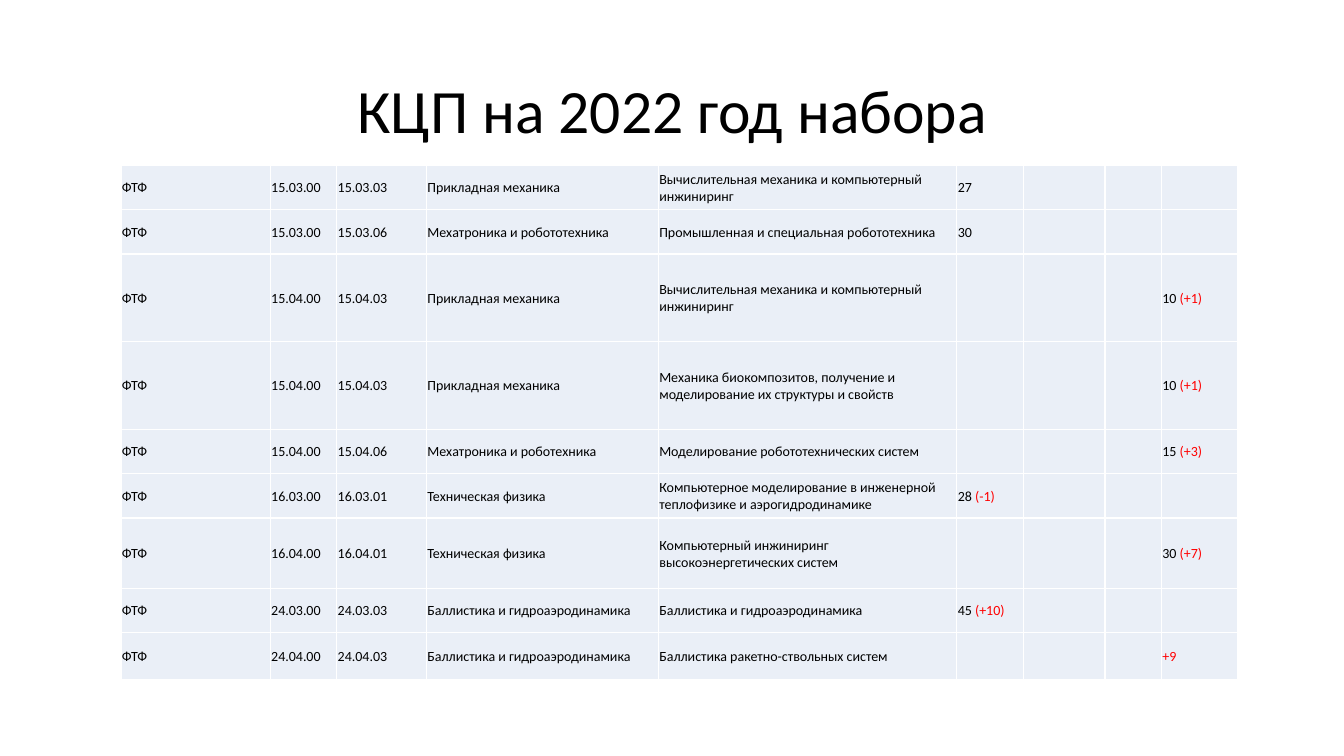
from pptx import Presentation
from pptx.dml.color import RGBColor
from pptx.enum.text import MSO_ANCHOR, PP_ALIGN
from pptx.util import Pt

PX = 9144  # EMU, 100 px to the inch
MIDDLE = MSO_ANCHOR.MIDDLE
CENTER = PP_ALIGN.CENTER
FONT = "Calibri"
TITLE_ONLY = 5

BLACK = RGBColor(0x00, 0x00, 0x00)
RED = RGBColor(0xFF, 0x00, 0x00)
PALE_BLUE = RGBColor(0xEA, 0xEF, 0xF7)

FACULTY = "ФТФ"
COLUMN_WIDTHS = [148, 66, 89, 230, 296, 66, 81, 56, 76]
BACHELOR_COLUMN = 5
MASTER_COLUMN = 8

# Row height, code, field, programme, places, change of places
PROGRAMMES = [
    (44, "15.03.03", "Прикладная механика",
     "Вычислительная механика и компьютерный инжиниринг", "27", ""),
    (44, "15.03.06", "Мехатроника и робототехника",
     "Промышленная и специальная робототехника", "30", ""),
    (87, "15.04.03", "Прикладная механика",
     "Вычислительная механика и компьютерный инжиниринг", "10 ", "(+1)"),
    (87, "15.04.03", "Прикладная механика",
     "Механика биокомпозитов, получение и моделирование их структуры и свойств",
     "10 ", "(+1)"),
    (44, "15.04.06", "Мехатроника и роботехника",
     "Моделирование робототехнических систем", "15 ", "(+3)"),
    (44, "16.03.01", "Техническая физика",
     "Компьютерное моделирование в инженерной теплофизике и аэрогидродинамике",
     "28 ", "(-1)"),
    (70, "16.04.01", "Техническая физика",
     "Компьютерный инжиниринг высокоэнергетических систем", "30 ", "(+7)"),
    (44, "24.03.03", "Баллистика и гидроаэродинамика",
     "Баллистика и гидроаэродинамика", "45 ", "(+10)"),
    (46, "24.04.03", "Баллистика и гидроаэродинамика",
     "Баллистика ракетно-ствольных систем", "", "+9"),
]


def set_font(paragraph, size):
    paragraph.font.name = FONT
    paragraph.font.size = Pt(size)
    paragraph.font.color.rgb = BLACK


def set_title(slide, text, left, top, width, height):
    title = slide.shapes.title
    title.left, title.top = left * PX, top * PX
    title.width, title.height = width * PX, height * PX
    title.text_frame.text = text
    title.text_frame.vertical_anchor = MIDDLE
    paragraph = title.text_frame.paragraphs[0]
    paragraph.alignment = CENTER
    paragraph.line_spacing = 0.9
    set_font(paragraph, 44)


def format_cell(cell):
    cell.fill.solid()
    cell.fill.fore_color.rgb = PALE_BLUE
    cell.vertical_anchor = MIDDLE
    cell.margin_left = cell.margin_right = cell.margin_top = PX
    cell.margin_bottom = 0
    set_font(cell.text_frame.paragraphs[0], 10)


def write_cell(cell, text, change=""):
    """Write text in black, followed by a change of places in red."""
    paragraph = cell.text_frame.paragraphs[0]
    if text:
        paragraph.add_run().text = text
    if change:
        run = paragraph.add_run()
        run.text = change
        run.font.color.rgb = RED


def add_programme_table(slide, left, top):
    width = sum(COLUMN_WIDTHS)
    height = sum(programme[0] for programme in PROGRAMMES)
    table = slide.shapes.add_table(
        len(PROGRAMMES), len(COLUMN_WIDTHS),
        left * PX, top * PX, width * PX, height * PX).table
    table.first_row = False
    table.horz_banding = False
    for column, column_width in zip(table.columns, COLUMN_WIDTHS):
        column.width = column_width * PX
    for cell in table.iter_cells():
        format_cell(cell)

    for index, programme in enumerate(PROGRAMMES):
        row_height, code, field, name, places, change = programme
        row = table.rows[index]
        row.height = row_height * PX
        group_code = code[:6] + "00"
        for column, text in enumerate([FACULTY, group_code, code, field, name]):
            write_cell(row.cells[column], text)
        is_bachelor = code[3:5] == "03"
        places_column = BACHELOR_COLUMN if is_bachelor else MASTER_COLUMN
        write_cell(row.cells[places_column], places, change)


def main():
    presentation = Presentation()
    presentation.slide_width = 1333 * PX
    presentation.slide_height = 750 * PX
    slide = presentation.slides.add_slide(presentation.slide_layouts[TITLE_ONLY])
    set_title(slide, "КЦП на 2022 год набора", 92, 40, 1150, 145)
    add_programme_table(slide, 120, 164)
    presentation.save("out.pptx")


if __name__ == "__main__":
    main()
